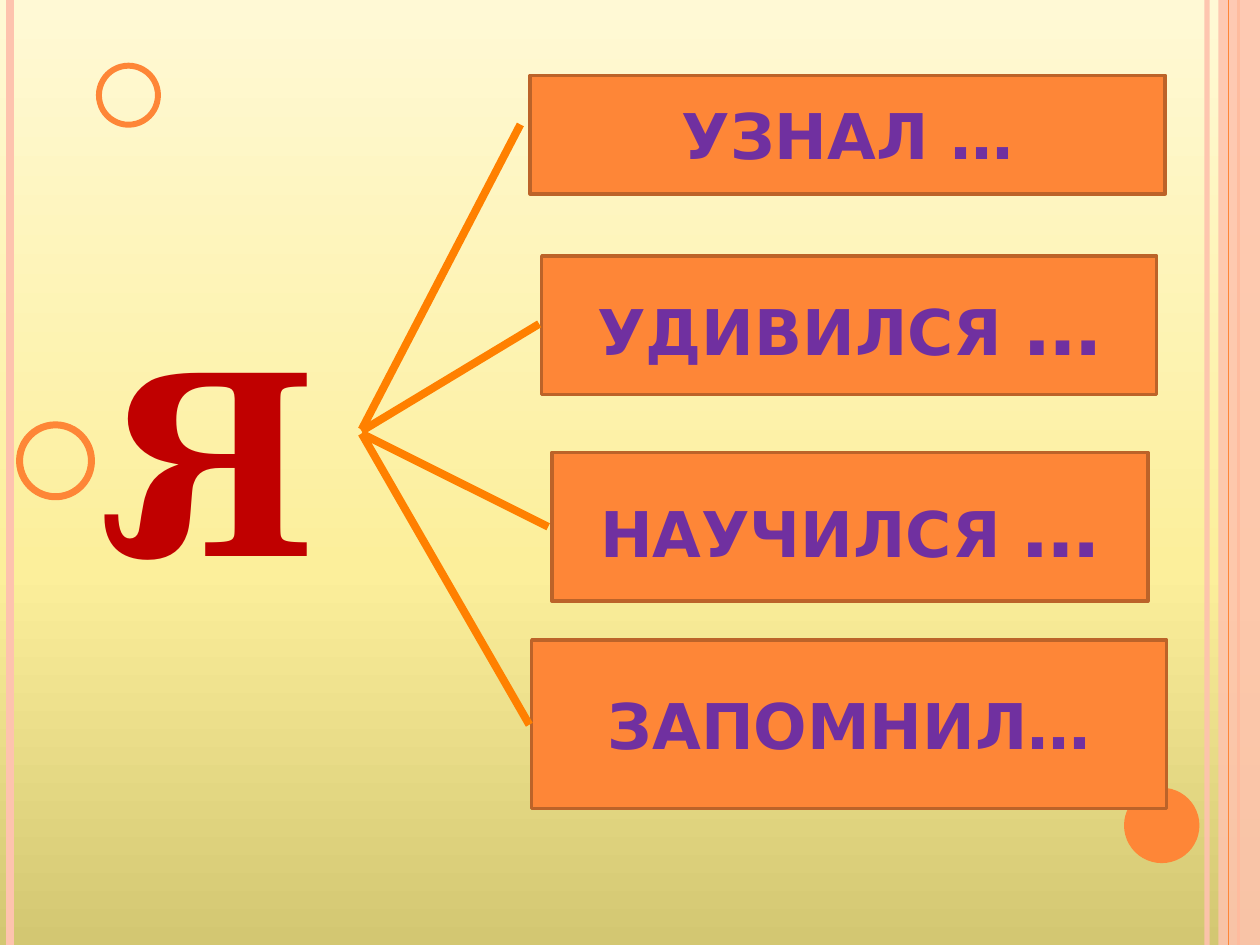
from copy import deepcopy

from lxml import etree
from pptx import Presentation
from pptx.dml.color import RGBColor
from pptx.enum.shapes import MSO_CONNECTOR, MSO_SHAPE
from pptx.enum.text import MSO_ANCHOR, PP_ALIGN
from pptx.oxml.ns import qn
from pptx.util import Cm, Pt

LINE = MSO_CONNECTOR.STRAIGHT
RECT, OVAL = MSO_SHAPE.RECTANGLE, MSO_SHAPE.OVAL
MID, CENTER = MSO_ANCHOR.MIDDLE, PP_ALIGN.CENTER

WIDE, HIGH = 25.4, 19.05
ORANGE, PINK, EDGE = "FE8637", "FEC3AE", "BC6329"
RED, PURPLE, RAY = "C00000", "7030A0", "FF8000"
SANS, SERIF = "DejaVu Sans", "TeX Gyre Schola"

STOPS = [(0, "D3C772"), (0.4, "FCEF9B"), (1, "FFF9D5")]
BARS = [(24.33, PINK, 3, 93), (0.2, PINK, 4.5, 100), (24.97, ORANGE, 1.5, 100)]
BAND = (24.56, 0, 0.84, HIGH)
STRIPE = (24.77, ORANGE, 0.75, 100)
DOT = (22.66, 15.88, 1.52, 1.52)
RINGS = [(2.59, 1.92, 1.19, 3.4), (1.12, 9.29, 1.45, 4)]
LETTER = ("Я", 145, (1.42, 7.04, 5.6, 5.16))
BOXES = [
    ((10.69, 1.52, 12.8, 2.39), [("УЗНАЛ …", 36)]),
    ((10.92, 5.16, 12.4, 2.79), [("УДИВИЛСЯ ", 36), ("…", 44)]),
    ((11.13, 9.12, 12.01, 3), [("НАУЧИЛСЯ ", 36), ("…", 44)]),
    ((10.72, 12.9, 12.8, 3.4), [("ЗАПОМНИЛ…", 36)]),
]
RAYS = [
    (7.29, 8.66, 10.49, 2.51),
    (7.29, 8.69, 10.87, 6.53),
    (7.29, 8.74, 11.05, 10.62),
    (7.29, 8.74, 10.67, 14.61),
]


def rgb(code):
    return RGBColor.from_string(code)


def fade(node, share):
    for color in node.iter(qn("a:srgbClr")):
        etree.SubElement(color, qn("a:alpha")).set("val", str(share * 1000))


def paint(slide):
    fill = slide.background.fill
    fill.gradient()
    fill.gradient_angle = 90
    stops = slide.element.xpath(".//a:gsLst")[0]
    stops.append(deepcopy(stops[0]))
    for stop, (place, code) in zip(fill.gradient_stops, STOPS):
        stop.position = place
        stop.color.rgb = rgb(code)


def draw(slide, ends, code, width, share=100):
    line = slide.shapes.add_connector(LINE, *map(Cm, ends))
    line.line.color.rgb = rgb(code)
    line.line.width = Pt(width)
    if share < 100:
        fade(line.element.spPr, share)
    etree.SubElement(line.element.spPr, qn("a:effectLst"))


def bar(slide, x, *style):
    draw(slide, (x, 0, x, HIGH), *style)


def form(slide, kind, area, fill=None, edge=None, width=2):
    shape = slide.shapes.add_shape(kind, *map(Cm, area))
    shape.shadow.inherit = False
    if fill:
        shape.fill.solid()
        shape.fill.fore_color.rgb = rgb(fill)
    else:
        shape.fill.background()
    if edge:
        shape.line.color.rgb = rgb(edge)
        shape.line.width = Pt(width)
    else:
        shape.line.fill.background()
    return shape


def write(frame, runs, face, code):
    frame.word_wrap = True
    para = frame.paragraphs[0]
    para.alignment = CENTER
    for text, size in runs:
        run = para.add_run()
        run.text = text
        run.font.size = Pt(size)
        run.font.name = face
        run.font.bold = True
        run.font.color.rgb = rgb(code)
    return para


def main():
    """Build the reflection slide and save it."""
    deck = Presentation()
    deck.slide_width, deck.slide_height = Cm(WIDE), Cm(HIGH)
    slide = deck.slides.add_slide(deck.slide_layouts[6])
    paint(slide)

    for item in BARS:
        bar(slide, *item)
    fade(form(slide, RECT, BAND, PINK).element.spPr, 87)
    bar(slide, *STRIPE)
    form(slide, OVAL, DOT, ORANGE)
    for x, y, size, width in RINGS:
        area = (x - size / 2, y - size / 2, size, size)
        form(slide, OVAL, area, edge=ORANGE, width=width)

    text, size, area = LETTER
    frame = slide.shapes.add_textbox(*map(Cm, area)).text_frame
    frame.margin_top = Cm(0.25)
    write(frame, [(text, size)], SERIF, RED).line_spacing = 0.8

    for area, runs in BOXES:
        frame = form(slide, RECT, area, ORANGE, EDGE).text_frame
        frame.vertical_anchor = MID
        write(frame, runs, SANS, PURPLE)
    for ends in RAYS:
        draw(slide, ends, RAY, 4.5)
    deck.save("out.pptx")


if __name__ == "__main__":
    main()
